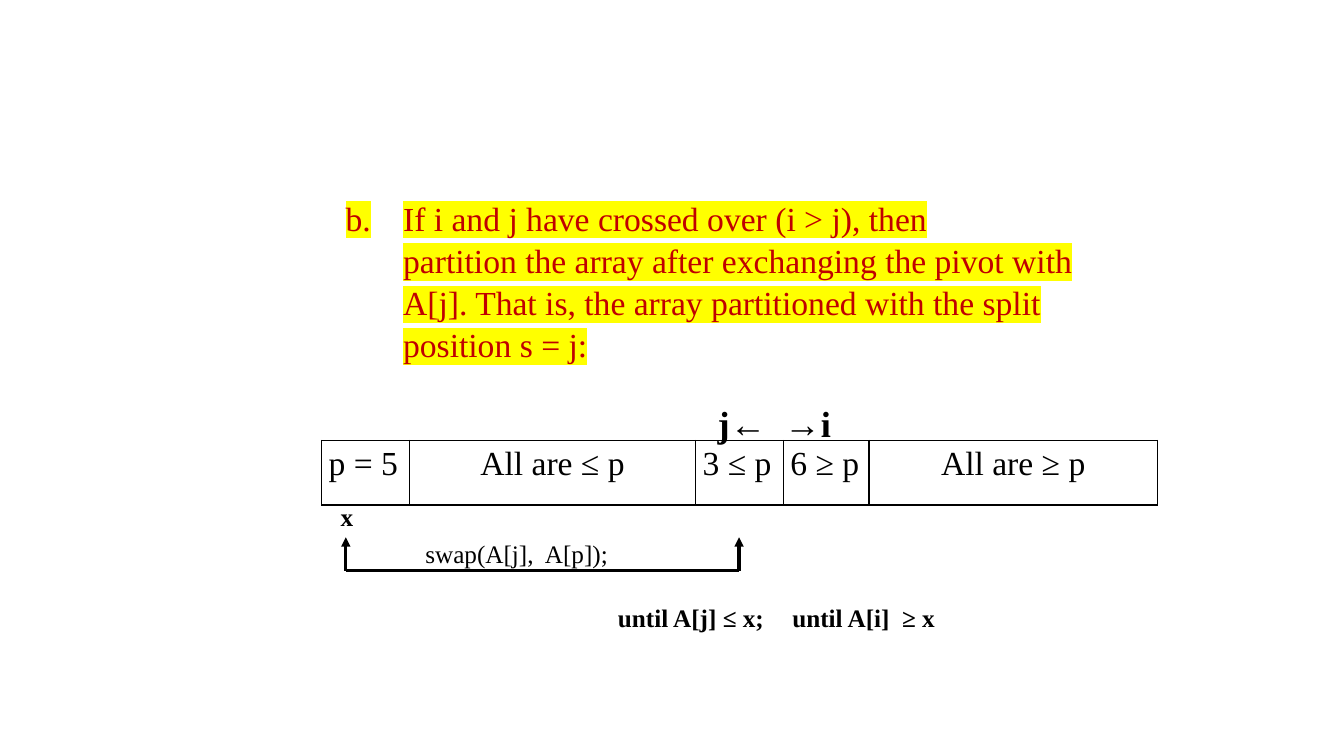
from lxml.etree import SubElement
from pptx import Presentation
from pptx.dml.color import RGBColor
from pptx.enum.text import MSO_ANCHOR, PP_ALIGN
from pptx.oxml import parse_xml
from pptx.oxml.ns import nsdecls, qn
from pptx.util import Inches, Pt

FONT = "Times New Roman"
BLACK, WHITE, RED, YELLOW = "000000", "FFFFFF", "C00000", "FFFF00"


def color(code):
    return RGBColor.from_string(code)


def add_run(para, text, size, ink=BLACK, bold=False, mark=None):
    run = para.add_run()
    run.text = text
    font = run.font
    font.size, font.name, font.bold = Pt(size), FONT, bold
    font.color.rgb = color(ink)
    if mark:
        light = parse_xml(f'<a:highlight {nsdecls("a")}>'
                          f'<a:srgbClr val="{mark}"/></a:highlight>')
        run._r.rPr.find(qn("a:solidFill")).addnext(light)


def add_box(slide, left, top, width, height):
    box = slide.shapes.add_textbox(Inches(left), Inches(top),
                                   Inches(width), Inches(height))
    box.text_frame.word_wrap = True
    return box.text_frame


def add_label(slide, text, left, top, width, size=18, bold=True):
    frame = add_box(slide, left, top, width, 0.4)
    add_run(frame.paragraphs[0], text, size, bold=bold)


def add_rule(slide, left, top, width, height):
    """Numbered rule "b." with its text hanging to the right."""
    frame = add_box(slide, left, top, width, height)
    lines = ["If i and j have crossed over (i > j), then",
             "partition the array after exchanging the pivot with "
             "A[j]. That is, the array partitioned with the split "
             "position s = j:"]
    for num, line in enumerate(lines):
        para = frame.add_paragraph() if num else frame.paragraphs[0]
        para.line_spacing = 1.05
        add_run(para, line, 24, RED, mark=YELLOW)
        props = para._p.get_or_add_pPr()
        props.set("marL", str(Inches(1.5)))
        props.set("indent", str(0 if num else Inches(-0.57)))
        if not num:
            SubElement(props, qn("a:buAutoNum"),
                       type="alphaLcPeriod", startAt="2")


def add_edges(cell):
    props = cell._tc.get_or_add_tcPr()
    for spot, side in enumerate(("lnL", "lnR", "lnT", "lnB")):
        props.insert(spot, parse_xml(
            f'<a:{side} {nsdecls("a")} w="{Pt(1)}"><a:solidFill>'
            f'<a:srgbClr val="{BLACK}"/></a:solidFill></a:{side}>'))


def add_array(slide, left, top, height):
    parts = [("p = 5", 0.87), ("All are ≤ p", 2.84), ("3 ≤ p", 0.87),
             ("6 ≥ p", 0.85), ("All are ≥ p", 2.86)]
    total = sum(width for _, width in parts)
    table = slide.shapes.add_table(1, len(parts), Inches(left), Inches(top),
                                   Inches(total), Inches(height)).table
    table.first_row = table.horz_banding = False
    for col, (text, width) in enumerate(parts):
        table.columns[col].width = Inches(width)
        cell = table.cell(0, col)
        cell.margin_left = cell.margin_right = Inches(0.07)
        cell.margin_top = cell.margin_bottom = 0
        cell.vertical_anchor = MSO_ANCHOR.TOP
        cell.fill.solid()
        cell.fill.fore_color.rgb = color(WHITE)
        add_edges(cell)
        para = cell.text_frame.paragraphs[0]
        para.line_spacing = 1.15
        para.alignment = PP_ALIGN.CENTER if width > 1 else PP_ALIGN.LEFT
        add_run(para, text, 24)


def add_line(slide, start, end, arrow=False):
    line = slide.shapes.add_connector(1, *map(Inches, start + end))
    line.line.color.rgb = color(BLACK)
    line.line.width = Pt(2.25)
    if arrow:
        SubElement(line.line._get_or_add_ln(), qn("a:tailEnd"),
                   type="triangle")
    SubElement(line._element.spPr, qn("a:effectLst"))


def add_swap(slide, left, top, width, height):
    """Bracket with an arrow up to each of the swapped cells."""
    right, base = left + width, top + height
    add_line(slide, (left, base), (right, base))
    for side in (left, right):
        add_line(slide, (side, base), (side, top), arrow=True)
    add_label(slide, "swap(A[j],  A[p]);", left + 0.69, top - 0.04, 2.14,
              bold=False)


def main():
    deck = Presentation()
    deck.slide_width, deck.slide_height = Inches(13.33), Inches(7.5)
    slide = deck.slides.add_slide(deck.slide_layouts[6])
    add_array(slide, 3.19, 4.37, 0.64)
    add_swap(slide, 3.43, 5.33, 3.9, 0.33)
    add_rule(slide, 2.4, 1.89, 8.77, 1.75)
    add_label(slide, "j←  →i", 7.02, 3.93, 1.5, size=26)
    add_label(slide, "x", 3.28, 4.92, 0.33)
    add_label(slide, "until A[j] ≤ x;", 6.03, 5.93, 1.74)
    add_label(slide, "until A[i]  ≥ x", 7.76, 5.93, 1.73)
    deck.save("out.pptx")


if __name__ == "__main__":
    main()
